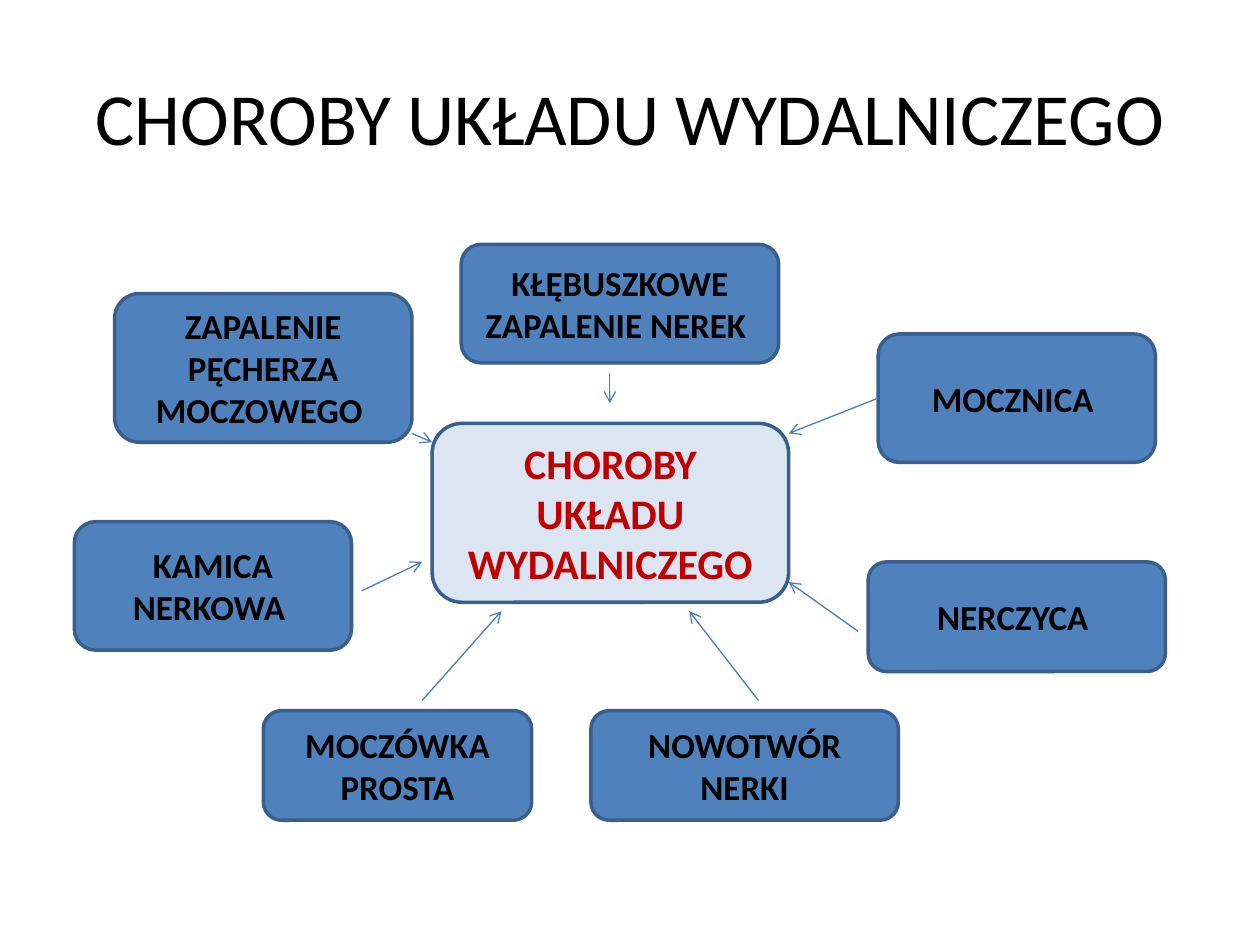
"""Build a slide mapping the diseases of the urinary system around a central topic."""
import pptx
import pptx.dml.color
import pptx.enum.shapes
import pptx.enum.text
import pptx.oxml.ns
import pptx.util
from lxml import etree

Inches = pptx.util.Inches
RGBColor = pptx.dml.color.RGBColor
SHAPES = pptx.enum.shapes.MSO_SHAPE

BLACK = RGBColor(0x00, 0x00, 0x00)
RED = RGBColor(0xC0, 0x00, 0x00)
PALE_BLUE = RGBColor(0xDC, 0xE6, 0xF2)
BLUE = RGBColor(0x4F, 0x81, 0xBD)
OUTLINE = RGBColor(0x3A, 0x5F, 0x8C)
ARROW = RGBColor(0x4B, 0x7E, 0xBC)


def write(shape, text, size, color, bold):
    frame = shape.text_frame
    frame.text = text
    frame.word_wrap = True
    frame.vertical_anchor = pptx.enum.text.MSO_ANCHOR.MIDDLE
    paragraph = frame.paragraphs[0]
    paragraph.alignment = pptx.enum.text.PP_ALIGN.CENTER
    font = paragraph.runs[0].font
    font.name = "Calibri"
    font.size = pptx.util.Pt(size)
    font.bold = bold
    font.color.rgb = color


def add_box(kind, bounds, text, fill, size, color):
    box = slide.shapes.add_shape(kind, *map(Inches, bounds))
    box.shadow.inherit = False
    box.fill.solid()
    box.fill.fore_color.rgb = fill
    box.line.color.rgb = OUTLINE
    box.line.width = pptx.util.Pt(2)
    write(box, text, size, color, True)
    return box


presentation = pptx.Presentation()
presentation.slide_width = Inches(10)
presentation.slide_height = Inches(7.5)
slide = presentation.slides.add_slide(presentation.slide_layouts[5])

title = slide.shapes.title
title.left, title.top, title.width, title.height = map(Inches, (0.5, 0.3, 9, 1.25))
write(title, "CHOROBY UKŁADU WYDALNICZEGO", 42, BLACK, False)

ROUNDED = SHAPES.ROUNDED_RECTANGLE
ALTERNATE = SHAPES.FLOWCHART_ALTERNATE_PROCESS

add_box(ALTERNATE, (3.43, 3.36, 2.83, 1.42), "CHOROBY UKŁADU WYDALNICZEGO", PALE_BLUE, 24, RED)

diseases = [
    ("ZAPALENIE PĘCHERZA MOCZOWEGO ", ROUNDED, (0.91, 2.33, 2.36, 1.18), (3.27, 3.44), (3.43, 3.51), None),
    ("KAMICA NERKOWA ", ALTERNATE, (0.59, 4.14, 2.2, 1.02), (2.87, 4.69), (3.35, 4.46), None),
    ("MOCZÓWKA PROSTA", ALTERNATE, (2.09, 5.64, 2.13, 0.87), (3.35, 5.56), (3.98, 4.85), None),
    ("KŁĘBUSZKOWE ZAPALENIE NEREK ", ALTERNATE, (3.66, 1.94, 2.52, 0.94), (4.84, 2.96), (4.84, 3.2), None),
    ("NOWOTWÓR NERKI", ALTERNATE, (4.69, 5.64, 2.44, 0.87), (6.02, 5.56), (5.47, 4.85), None),
    ("MOCZNICA ", ALTERNATE, (6.97, 2.65, 2.2, 1.02), (6.97, 3.16), (6.26, 3.44), 1),
    ("NERCZYCA ", ALTERNATE, (6.89, 4.46, 2.36, 0.87), (6.81, 5.01), (6.26, 4.62), None),
]

for name, kind, bounds, start, end, joined_side in diseases:
    disease = add_box(kind, bounds, name, BLUE, 20, BLACK)
    arrow = slide.shapes.add_connector(
        pptx.enum.shapes.MSO_CONNECTOR.STRAIGHT, *map(Inches, start + end)
    )
    if joined_side is not None:
        arrow.begin_connect(disease, joined_side)
    arrow.line.color.rgb = ARROW
    arrow.line.width = pptx.util.Pt(0.75)
    properties = arrow.element.spPr
    outline = properties.find(pptx.oxml.ns.qn("a:ln"))
    etree.SubElement(outline, pptx.oxml.ns.qn("a:tailEnd"), type="arrow")
    etree.SubElement(properties, pptx.oxml.ns.qn("a:effectLst"))

presentation.save("out.pptx")
